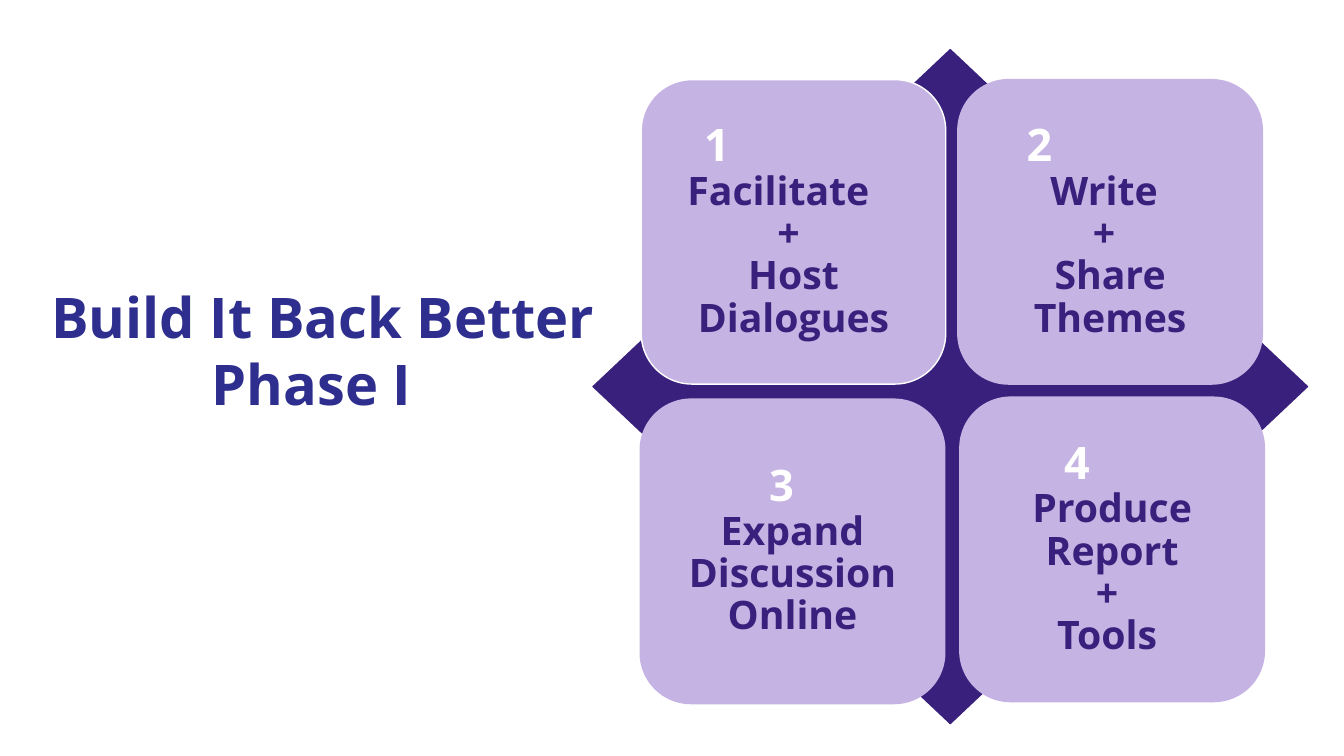
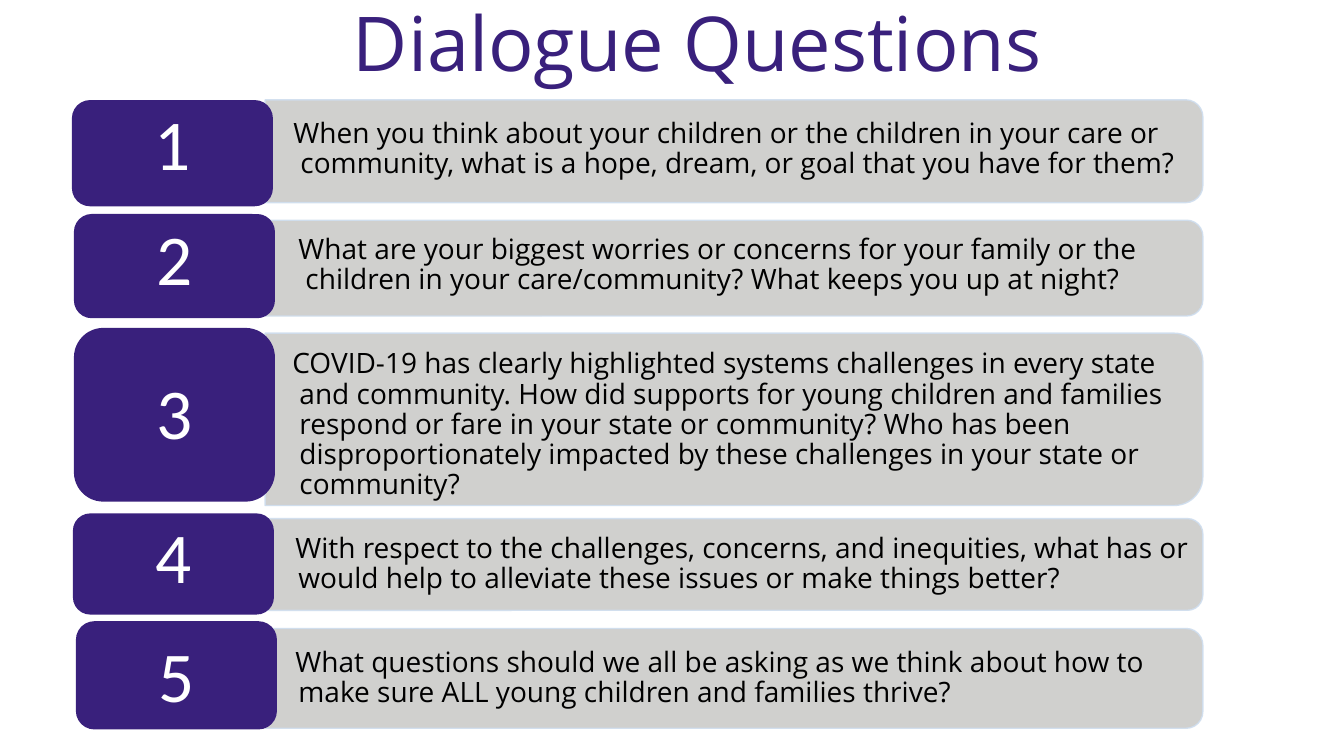
from pptx import Presentation
from pptx import util as u
from pptx.dml.color import RGBColor
from pptx.enum import shapes, text
from pptx.oxml.ns import qn
from lxml import etree

COLORS = {
    "purple": "39207C",
    "indigo": "2D2E8D",
    "lilac": "C5B4E3",
    "gray": "D0D0CE",
    "pale": "CFDEEF",
    "white": "FFFFFF",
    "black": "000000",
}

CARDS = [
    (6.36, 0.79, "white", 32, [("1", -0.76), ("Facilitate", -0.15), ("+", -0.05), ("Host Dialogues", 0)]),
    (9.5, 0.79, "lilac", 32, [("2", -0.7), ("Write", -0.06), ("+", -0.06), ("Share Themes", 0)]),
    (6.35, 3.96, "lilac", 31, [("3", -0.11), ("Expand Discussion Online", 0)]),
    (9.52, 3.94, "lilac", 32, [("4", -0.35), ("Produce Report", 0), ("+", -0.05), ("Tools", -0.05)]),
]

QUESTIONS = [
    {"bar": (1.5, 1.02), "tag": (0.72, 1, 1.04), "number_middle": 1.46,
     "left": 2.98, "middle": 1.48, "first_line": -0.07,
     "words": "When you think about your children or the children in your care or community, "
              "what is a hope, dream, or goal that you have for them?"},
    {"bar": (2.66, 0.95), "tag": (0.74, 2.13, 1.02), "number_middle": 2.6,
     "left": 3.03, "middle": 2.63, "first_line": -0.07,
     "words": "What are your biggest worries or concerns for your family or the children in your "
              "care/community? What keeps you up at night?"},
    {"bar": (4.16, 1.71), "tag": (0.74, 3.26, 1.71), "number_middle": 4.13,
     "left": 2.97, "middle": 4.22, "first_line": -0.07,
     "words": "COVID-19 has clearly highlighted systems challenges in every state and community. "
              "How did supports for young children and families respond or fare in your state or "
              "community? Who has been disproportionately impacted by these challenges in your "
              "state or community?"},
    {"bar": (5.6, 0.91), "tag": (0.73, 5.1, 0.99), "number_middle": 5.56,
     "left": 2.96, "middle": 5.6, "first_line": -0.03,
     "words": "With respect to the challenges, concerns, and inequities, what has or would help "
              "to alleviate these issues or make things better?"},
    {"bar": (6.73, 0.99), "tag": (0.76, 6.17, 1.06), "number_middle": 6.74,
     "left": 2.96, "middle": 6.73, "first_line": -0.03,
     "words": "What questions should we all be asking as we think about how to make sure ALL "
              "young children and families thrive?"},
]


def rgb(name):
    return RGBColor.from_string(COLORS[name])


def write(paragraph, words, size, color, font="Open Sans", bold=False,
          align=text.PP_ALIGN.LEFT, spacing=0.9, left=0, right=0, first_line=0):
    paragraph.alignment = align
    paragraph.line_spacing = spacing
    properties = paragraph._p.get_or_add_pPr()
    for name, length in (("marL", left), ("marR", right), ("indent", first_line)):
        properties.set(name, str(u.Inches(length)))
    run = paragraph.add_run()
    run.text = words
    run.font.size = u.Pt(size)
    run.font.name = font
    run.font.bold = bold
    run.font.color.rgb = rgb(color)


def set_frame(frame, anchor, margins):
    frame.word_wrap = True
    frame.auto_size = text.MSO_AUTO_SIZE.NONE
    frame.vertical_anchor = anchor
    (frame.margin_left, frame.margin_top,
     frame.margin_right, frame.margin_bottom) = [u.Inches(margin) for margin in margins]
    return frame


def next_paragraph(frame, index):
    return frame.add_paragraph() if index else frame.paragraphs[0]


class Deck:
    def __init__(self):
        self.presentation = Presentation()
        self.presentation.slide_width = u.Inches(13.33)
        self.presentation.slide_height = u.Inches(7.5)
        self.slide = None

    def new_slide(self, box, lines, **style):
        self.slide = self.presentation.slides.add_slide(self.presentation.slide_layouts[5])
        title = self.slide.shapes.title
        title.left, title.top, title.width, title.height = [u.Inches(length) for length in box]
        frame = set_frame(title.text_frame, text.MSO_ANCHOR.TOP, (0.1, 0.05, 0.1, 0.05))
        for index, (words, left) in enumerate(lines):
            write(next_paragraph(frame, index), words, spacing=1.0, left=left, **style)

    def shape(self, kind, box, fill, line, width=1):
        shape = self.slide.shapes.add_shape(kind, *[u.Inches(length) for length in box])
        shape.shadow.inherit = False
        shape.fill.solid()
        shape.fill.fore_color.rgb = rgb(fill)
        shape.line.color.rgb = rgb(line)
        shape.line.width = u.Pt(width)
        return shape

    def card(self, left, top, line, number_size, lines):
        card = self.shape(shapes.MSO_SHAPE.ROUNDED_RECTANGLE, (left, top, 3.02, 3.02), "lilac", line)
        frame = set_frame(card.text_frame, text.MSO_ANCHOR.MIDDLE, (0.13,) * 4)
        for index, (words, shift) in enumerate(lines):
            size, color = (28, "purple") if index else (number_size, "white")
            write(next_paragraph(frame, index), words, size, color, bold=True,
                  align=text.PP_ALIGN.CENTER, right=-2 * shift)

    def bar(self, middle, height, center=7.28, width=9.3):
        bar = self.shape(shapes.MSO_SHAPE.ROUND_2_SAME_RECTANGLE,
                         (center - height / 2, middle - width / 2, height, width), "gray", "pale")
        bar.rotation = 90
        line_color = bar.line._ln.find(".//" + qn("a:srgbClr"))
        etree.SubElement(line_color, qn("a:alpha")).set("val", "89000")

    def tag(self, number, left, top, height, number_middle):
        tag = self.shape(shapes.MSO_SHAPE.ROUNDED_RECTANGLE, (left, top, 1.98, height), "purple", "purple")
        shift = 2 * (number_middle - top - height / 2)
        frame = set_frame(tag.text_frame, text.MSO_ANCHOR.MIDDLE,
                          (0.2, max(shift, 0), 0.2, max(-shift, 0)))
        write(frame.paragraphs[0], str(number), 51, "white", font="Calibri", align=text.PP_ALIGN.CENTER)

    def question(self, words, left, middle, first_line, right=11.8, height=0.86, hang=0.1):
        box = (left - hang, middle - height / 2, right - left + hang, height)
        textbox = self.slide.shapes.add_textbox(*[u.Inches(length) for length in box])
        frame = set_frame(textbox.text_frame, text.MSO_ANCHOR.MIDDLE, (0,) * 4)
        write(frame.paragraphs[0], words, 20, "black", left=hang, first_line=first_line)


def main():
    deck = Deck()

    deck.new_slide((0.41, 2.75, 5.8, 1.5), [("Build It Back Better", 0), ("Phase I", 1.59)],
                   size=40, color="indigo", bold=True)
    deck.shape(shapes.MSO_SHAPE.DIAMOND, (5.88, 0.49, 7.09, 6.69), "purple", "purple", 0.75)
    for card in CARDS:
        deck.card(*card)

    deck.new_slide((3.4, -0.09, 9.83, 1.05), [("Dialogue Questions", 0)], size=54, color="purple")
    for number, item in enumerate(QUESTIONS, 1):
        deck.bar(*item["bar"])
        height = 1.6 if number == 3 else 0.86
        deck.question(item["words"], item["left"], item["middle"], item["first_line"], height=height)
        deck.tag(number, *item["tag"], item["number_middle"])

    deck.presentation.save("out.pptx")


if __name__ == "__main__":
    main()
